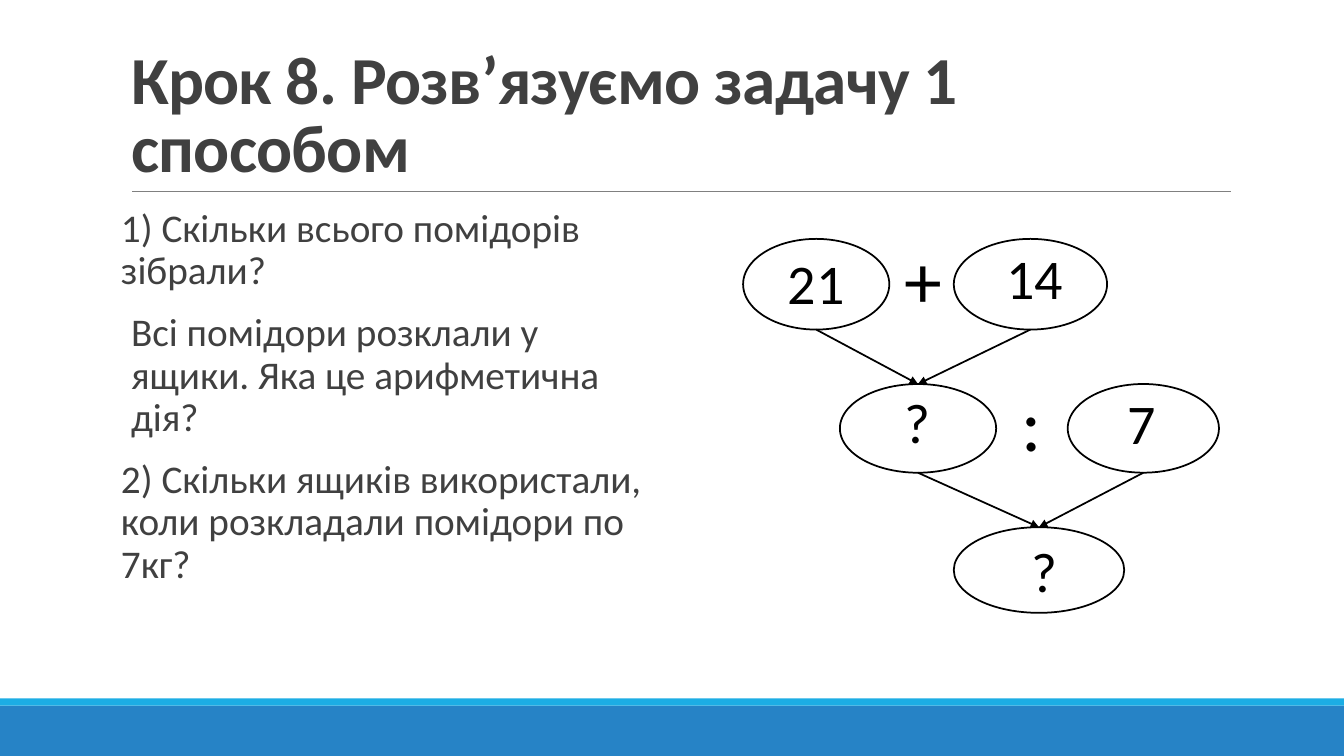
from pptx import Presentation
from pptx.dml.color import RGBColor
from pptx.enum.shapes import MSO_CONNECTOR as Link, MSO_SHAPE as Shape
from pptx.enum.text import MSO_ANCHOR as Anchor, MSO_AUTO_SIZE as Fit, PP_ALIGN as Align
from pptx.oxml.ns import qn
from pptx.util import Inches, Pt
from lxml.etree import SubElement

WHITE = RGBColor(0xFF, 0xFF, 0xFF)
BLACK = RGBColor(0, 0, 0)
DARK = RGBColor(0x40, 0x40, 0x40)
GRAY = RGBColor(0x80, 0x80, 0x80)
BLUE = RGBColor(0x26, 0x83, 0xC6)
CYAN = RGBColor(0x1C, 0xAD, 0xE4)

TITLE = "Крок 8. Розв’язуємо задачу 1 способом"
# text, left indent
STEPS = [
    ("1) Скільки всього помідорів зібрали?", 0),
    ("Всі помідори розклали у ящики. Яка це арифметична дія?", 0.1),
    ("2) Скільки ящиків використали, коли розкладали помідори по 7кг?", 0),
]
# left, top, width, height
BANDS = [((0, 7, 13.33, 0.5), BLUE), ((0, 6.93, 13.33, 0.07), CYAN)]
OVALS = {
    "first": (7.37, 2.37, 1.45, 0.9),
    "second": (9.46, 2.37, 1.52, 0.9),
    "sum": (8.33, 3.81, 1.55, 0.88),
    "divisor": (10.59, 3.81, 1.5, 0.88),
    "answer": (9.46, 5.23, 1.69, 0.85),
}
ARROWS = [("first", "sum"), ("second", "sum"), ("sum", "answer"), ("divisor", "answer")]
# text, box, size
LABELS = [
    ("21", (7.71, 2.42, 0.77, 0.77), 40),
    ("14", (9.88, 2.37, 0.77, 0.77), 40),
    ("?", (8.87, 3.8, 0.46, 0.77), 40),
    ("?", (10.13, 5.27, 0.46, 0.77), 40),
    ("7", (11.08, 3.81, 0.49, 0.77), 40),
    ("+", (8.87, 2.26, 0.58, 1.01), 54),
    (":", (10.03, 3.68, 0.41, 1.01), 54),
]


def inches(box):
    return [Inches(v) for v in box]


def style(para, size, color, bold=False):
    font = para.font
    font.name, font.size, font.bold = "Calibri", Pt(size), bold
    font.color.rgb = color


def add_solid(slide, kind, box, fill, line=None):
    shape = slide.shapes.add_shape(kind, *inches(box))
    shape.shadow.inherit = False
    shape.fill.solid()
    shape.fill.fore_color.rgb = fill
    if line is None:
        shape.line.fill.background()
    else:
        shape.line.color.rgb = line
        shape.line.width = Pt(1.25)


def add_line(slide, start, end, color, width, arrow=False):
    line = slide.shapes.add_connector(Link.STRAIGHT, *inches(start + end))
    line.line.color.rgb = color
    line.line.width = Pt(width)
    if arrow:
        SubElement(line.line._get_or_add_ln(), qn("a:tailEnd"), type="triangle")
    SubElement(line._element.spPr, qn("a:effectLst"))


def add_title(slide):
    title = slide.shapes.title
    title.left, title.top, title.width, title.height = inches((1.2, 0.31, 11, 1.59))
    frame = title.text_frame
    frame.text = TITLE
    frame.auto_size = Fit.NONE
    frame.word_wrap = True
    frame.vertical_anchor = Anchor.BOTTOM
    para = frame.paragraphs[0]
    para.alignment = Align.LEFT
    para.line_spacing = 0.85
    style(para, 48, DARK, True)
    para.runs[0].font._element.set("spc", "-50")


def add_steps(slide):
    frame = slide.shapes.add_textbox(*inches((1.2, 2.02, 5.3, 4.4))).text_frame
    frame.word_wrap = True
    frame.margin_left = frame.margin_right = 0
    frame.text = "\n".join(text for text, _ in STEPS)
    for para, (_, indent) in zip(frame.paragraphs, STEPS):
        para.line_spacing = 0.9
        para.space_before, para.space_after = Pt(12), Pt(2)
        para._p.get_or_add_pPr().set("marL", str(Inches(indent)))
        style(para, 28, DARK)


def add_label(slide, text, box, size):
    frame = slide.shapes.add_textbox(*inches(box)).text_frame
    frame.word_wrap = False
    frame.text = text
    para = frame.paragraphs[0]
    para.alignment = Align.CENTER
    style(para, size, BLACK)


def add_scheme(slide):
    for box in OVALS.values():
        add_solid(slide, Shape.OVAL, box, WHITE, BLACK)
    for label in LABELS:
        add_label(slide, *label)
    for source, target in ARROWS:
        left, top, width, height = OVALS[source]
        x, y, w, _ = OVALS[target]
        add_line(slide, (left + width / 2, top + height), (x + w / 2, y), BLACK, 1.25, True)


def main():
    deck = Presentation()
    deck.slide_width, deck.slide_height = Inches(13.33), Inches(7.5)
    slide = deck.slides.add_slide(deck.slide_layouts[5])
    for box, color in BANDS:
        add_solid(slide, Shape.RECTANGLE, box, color)
    add_line(slide, (1.31, 1.9), (12.21, 1.9), GRAY, 0.5)
    add_title(slide)
    add_steps(slide)
    add_scheme(slide)
    deck.save("out.pptx")


if __name__ == "__main__":
    main()
